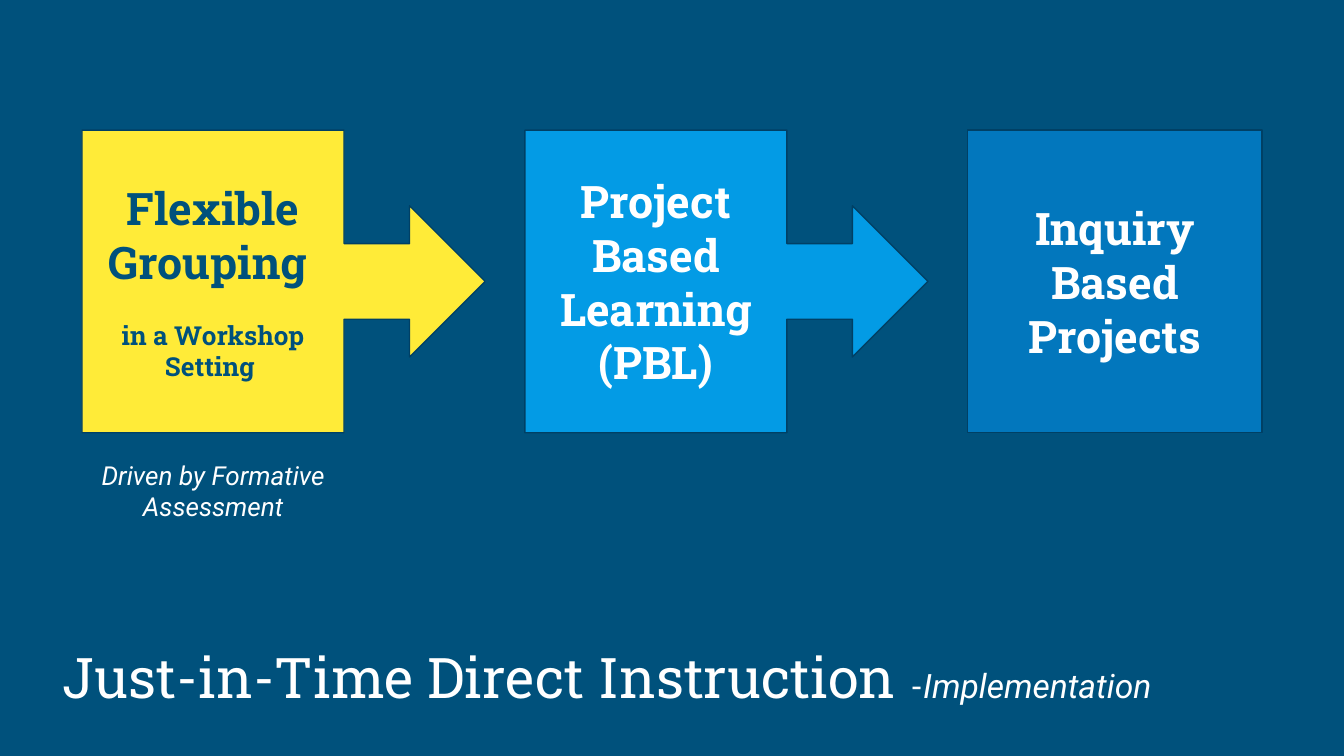
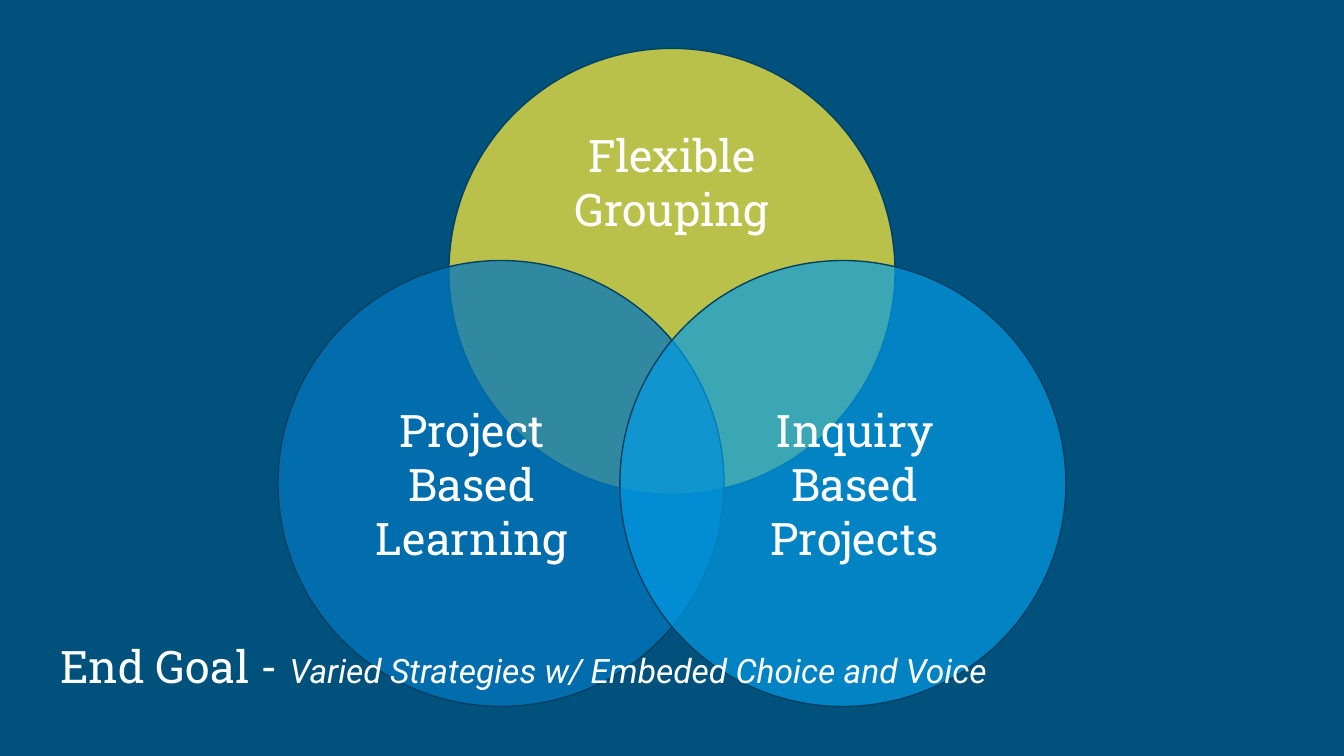
from lxml import etree
from pptx import Presentation
from pptx import util as u
from pptx.dml.color import RGBColor
from pptx.enum import shapes, text
from pptx.oxml.ns import qn

NAVY = RGBColor(0x00, 0x51, 0x7C)
OUTLINE = RGBColor(0x00, 0x40, 0x65)
YELLOW = RGBColor(0xFF, 0xEB, 0x38)
SKY = RGBColor(0x03, 0x9B, 0xE5)
BLUE = RGBColor(0x02, 0x77, 0xBD)
WHITE = RGBColor(0xFF, 0xFF, 0xFF)
SLAB, SANS = "Roboto Slab", "Roboto"
INSET = 0.25


class Deck:
    """Holds the shared style and the slide being built."""

    def __init__(self):
        self.prs = Presentation()
        self.prs.slide_width, self.prs.slide_height = u.Cm(25.4), u.Cm(14.29)
        self.slide = None

    def new_slide(self):
        self.slide = self.prs.slides.add_slide(self.prs.slide_layouts[6])
        fill = self.slide.background.fill
        fill.solid()
        fill.fore_color.rgb = NAVY

    def style_font(self, font, size, name=SLAB, color=WHITE, bold=False, italic=False):
        font.size, font.name = u.Pt(size), name
        font.color.rgb = color
        font.bold, font.italic = bold, italic

    def frame(self, shape, anchor):
        frame = shape.text_frame
        frame.word_wrap = True
        frame.vertical_anchor = anchor
        frame.margin_left = frame.margin_right = u.Cm(INSET)
        frame.margin_top = frame.margin_bottom = u.Cm(INSET)
        return frame

    def set_lines(self, shape, lines, anchor=text.MSO_ANCHOR.MIDDLE, **style):
        """Each line is (wording, size, space before in points)."""
        frame = self.frame(shape, anchor)
        for i, (wording, size, gap) in enumerate(lines):
            paragraph = frame.add_paragraph() if i else frame.paragraphs[0]
            paragraph.text = wording
            paragraph.alignment = text.PP_ALIGN.CENTER
            paragraph.space_before = u.Pt(gap)
            self.style_font(paragraph.font, size, **style)

    def shape(self, kind, box, color, opacity=100):
        shape = self.slide.shapes.add_shape(kind, *map(u.Cm, box))
        shape.shadow.inherit = False
        shape.fill.solid()
        shape.fill.fore_color.rgb = color
        if opacity < 100:
            tint = shape.element.spPr.find(qn("a:solidFill"))[0]
            etree.SubElement(tint, qn("a:alpha"), val=str(opacity * 1000))
        shape.line.color.rgb = OUTLINE
        shape.line.width = u.Pt(0.75)
        return shape

    def step(self, kind, box, color, lines, ink=WHITE):
        step = self.shape(kind, box, color)
        if kind == shapes.MSO_SHAPE.RIGHT_ARROW_CALLOUT:
            for i, value in enumerate((0.25, 0.25, 0.25, 0.65)):
                step.adjustments[i] = value
        self.set_lines(step, lines, color=ink, bold=True)

    def circle(self, center_x, center_y, diameter, color, opacity):
        box = (center_x - diameter / 2, center_y - diameter / 2, diameter, diameter)
        self.shape(shapes.MSO_SHAPE.OVAL, box, color, opacity)

    def label(self, box, wording, size, **style):
        holder = self.slide.shapes.add_textbox(*map(u.Cm, box))
        self.set_lines(holder, [(wording, size, 0)], **style)

    def title(self, box, runs):
        """Each run is (wording, size, style)."""
        holder = self.slide.shapes.add_textbox(*map(u.Cm, box))
        paragraph = self.frame(holder, text.MSO_ANCHOR.MIDDLE).paragraphs[0]
        for wording, size, style in runs:
            run = paragraph.add_run()
            run.text = wording
            self.style_font(run.font, size, **style)


def build_implementation(deck):
    deck.new_slide()

    # Three steps from left to right
    callout, rect = shapes.MSO_SHAPE.RIGHT_ARROW_CALLOUT, shapes.MSO_SHAPE.RECTANGLE
    steps = [
        (callout, 7.62, YELLOW, NAVY,
         [("Flexible Grouping ", 24, 0), ("in a Workshop Setting ", 14, 16.5)]),
        (callout, 7.62, SKY, WHITE,
         [("Project Based Learning", 24, 0), ("(PBL)", 24, 0)]),
        (rect, 5.56, BLUE, WHITE, [("Inquiry Based Projects", 24, 0)]),
    ]
    for i, (kind, width, color, ink, lines) in enumerate(steps):
        deck.step(kind, (1.55 + i * 8.37, 2.46, width, 5.72), color, lines, ink)

    # Caption and title
    deck.label((1.63, 8.43, 4.8, 1.27), "Driven by Formative Assessment", 14,
               anchor=text.MSO_ANCHOR.TOP, name=SANS, italic=True)
    deck.title((0.94, 11.96, 23.8, 1.65), [
        ("Just-in-Time Direct Instruction ", 30, {}),
        ("-", 18, {}),
        ("Implementation", 18, {"name": SANS, "italic": True}),
    ])


def build_end_goal(deck):
    deck.new_slide()

    # Overlapping circles: centre, colour, opacity, label, label centre
    strategies = [
        (12.7, 5.13, YELLOW, 73, "Flexible Grouping", 12.7, 3.43),
        (9.47, 9.14, BLUE, 75, "Project Based Learning", 8.92, 9.14),
        (15.93, 9.14, SKY, 69, "Inquiry Based Projects", 16.15, 9.14),
    ]
    for x, y, color, opacity, *_ in strategies:
        deck.circle(x, y, 8.43, color, opacity)

    # Labels above all circles
    width, height = 4.42, 3
    for *_, wording, x, y in strategies:
        deck.label((x - width / 2, y - height / 2, width, height), wording, 24)

    # Title
    deck.title((0.89, 11.76, 23.6, 1.65), [
        ("End Goal - ", 24, {}),
        ("Varied Strategies w/ Embeded Choice and Voice", 18,
         {"name": SANS, "italic": True}),
    ])


def main():
    deck = Deck()
    build_implementation(deck)
    build_end_goal(deck)
    deck.prs.save("out.pptx")


if __name__ == "__main__":
    main()
